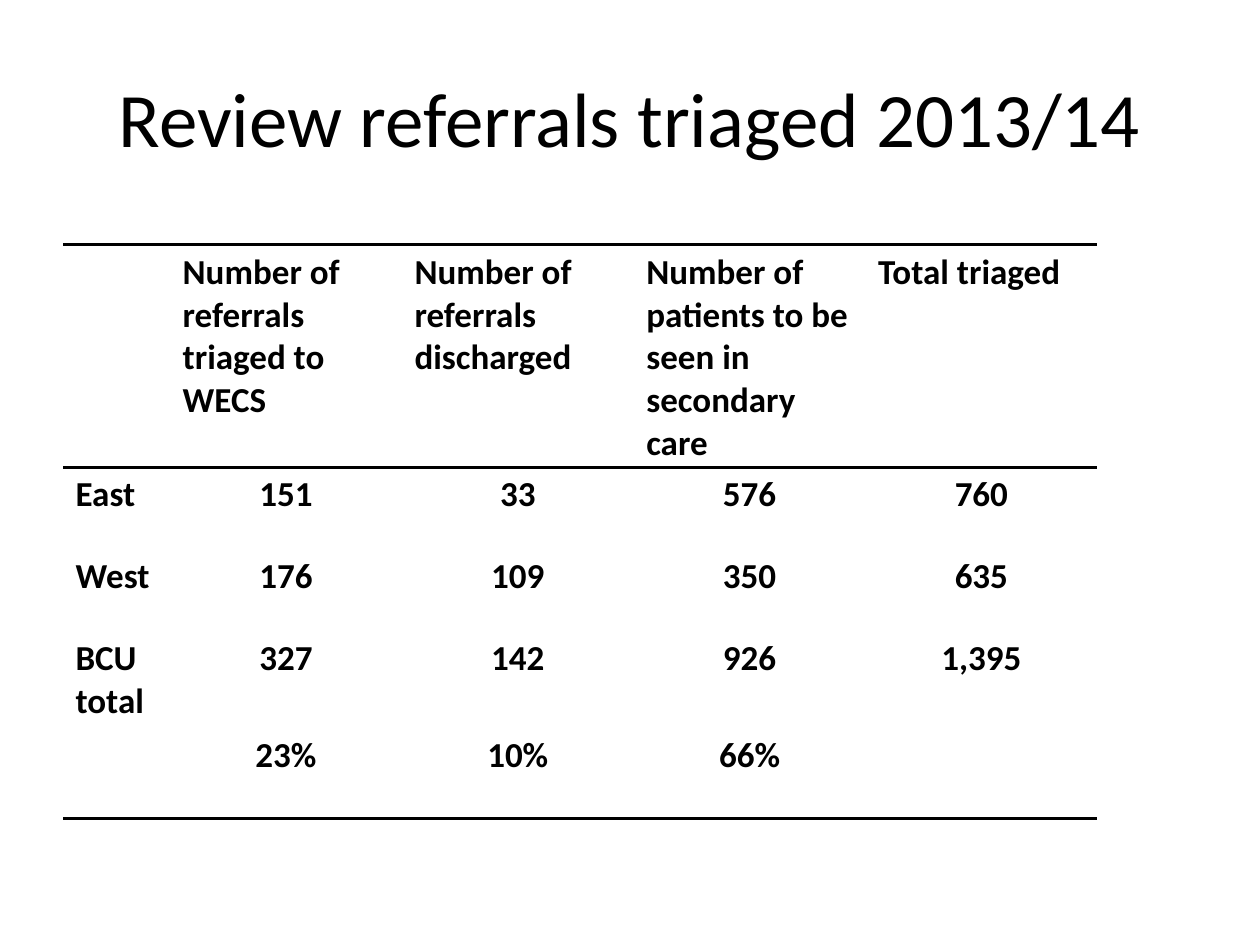
import pptx
import pptx.util
import pptx.dml.color
import pptx.enum.text
import lxml.etree
import pptx.oxml.ns

Inches = pptx.util.Inches
Pt = pptx.util.Pt
ALIGN = pptx.enum.text.PP_ALIGN
COLORS = {"text": "000000", "rule": "000000", "cell": "FFFFFF"}
FONT = "Calibri"


def style_paragraph(para, size, bold, align):
    para.alignment = align
    for span in para.runs:
        span.font.name = FONT
        span.font.size = Pt(size)
        span.font.bold = bold
        span.font.color.rgb = pptx.dml.color.RGBColor.from_string(COLORS["text"])


def set_borders(cell, ruled_sides):
    """Draw a 2 pt rule on the given sides and clear the others."""
    qn = pptx.oxml.ns.qn
    properties = cell._tc.get_or_add_tcPr()
    for position, side in enumerate("LRTB"):
        line = lxml.etree.Element(qn("a:ln" + side), w=str(Pt(2)))
        if side in ruled_sides:
            fill = lxml.etree.SubElement(line, qn("a:solidFill"))
            lxml.etree.SubElement(fill, qn("a:srgbClr"), val=COLORS["rule"])
        else:
            lxml.etree.SubElement(line, qn("a:noFill"))
        properties.insert(position, line)


deck = pptx.Presentation()
deck.slide_width = Inches(10)
deck.slide_height = Inches(7.5)
page = deck.slides.add_slide(deck.slide_layouts[6])

# Title
title = page.shapes.add_textbox(Inches(0.5), Inches(0.3), Inches(9), Inches(1.25))
title.text_frame.word_wrap = True
title.text_frame.vertical_anchor = pptx.enum.text.MSO_ANCHOR.MIDDLE
title.text_frame.text = "Review referrals triaged 2013/14"
style_paragraph(title.text_frame.paragraphs[0], 44, False, ALIGN.CENTER)

# Referral table
rows = [
    ["", "Number of referrals triaged to WECS", "Number of referrals discharged",
     "Number of patients to be seen in secondary care", "Total triaged"],
    ["East", "151", "33", "576", "760"],
    ["West", "176", "109", "350", "635"],
    ["BCU total", "327", "142", "926", "1,395"],
    ["", "23%", "10%", "66%", ""],
]
row_heights = [1.3, 0.65, 0.65, 0.72, 0.72]
column_widths = [0.85] + [1.84] * 4
row_rules = ["TB", "T", "", "", "B"]

frame = page.shapes.add_table(len(rows), len(column_widths), Inches(0.5), Inches(1.94),
                              Inches(8.2), Inches(4.55))
table = frame.table
table.first_row = False
table.horz_banding = False
for column, width in zip(table.columns, column_widths):
    column.width = Inches(width)
for row, height in zip(table.rows, row_heights):
    row.height = Inches(height)
frame.height = Inches(4.55)

# Cell text, fill and rules
for row_index, values in enumerate(rows):
    for column_index, value in enumerate(values):
        cell = table.cell(row_index, column_index)
        cell.fill.solid()
        cell.fill.fore_color.rgb = pptx.dml.color.RGBColor.from_string(COLORS["cell"])
        set_borders(cell, row_rules[row_index])
        if value:
            cell.text_frame.text = value
            is_number = row_index > 0 and column_index > 0
            style_paragraph(cell.text_frame.paragraphs[0], 20, True,
                            ALIGN.CENTER if is_number else ALIGN.LEFT)

deck.save("out.pptx")
